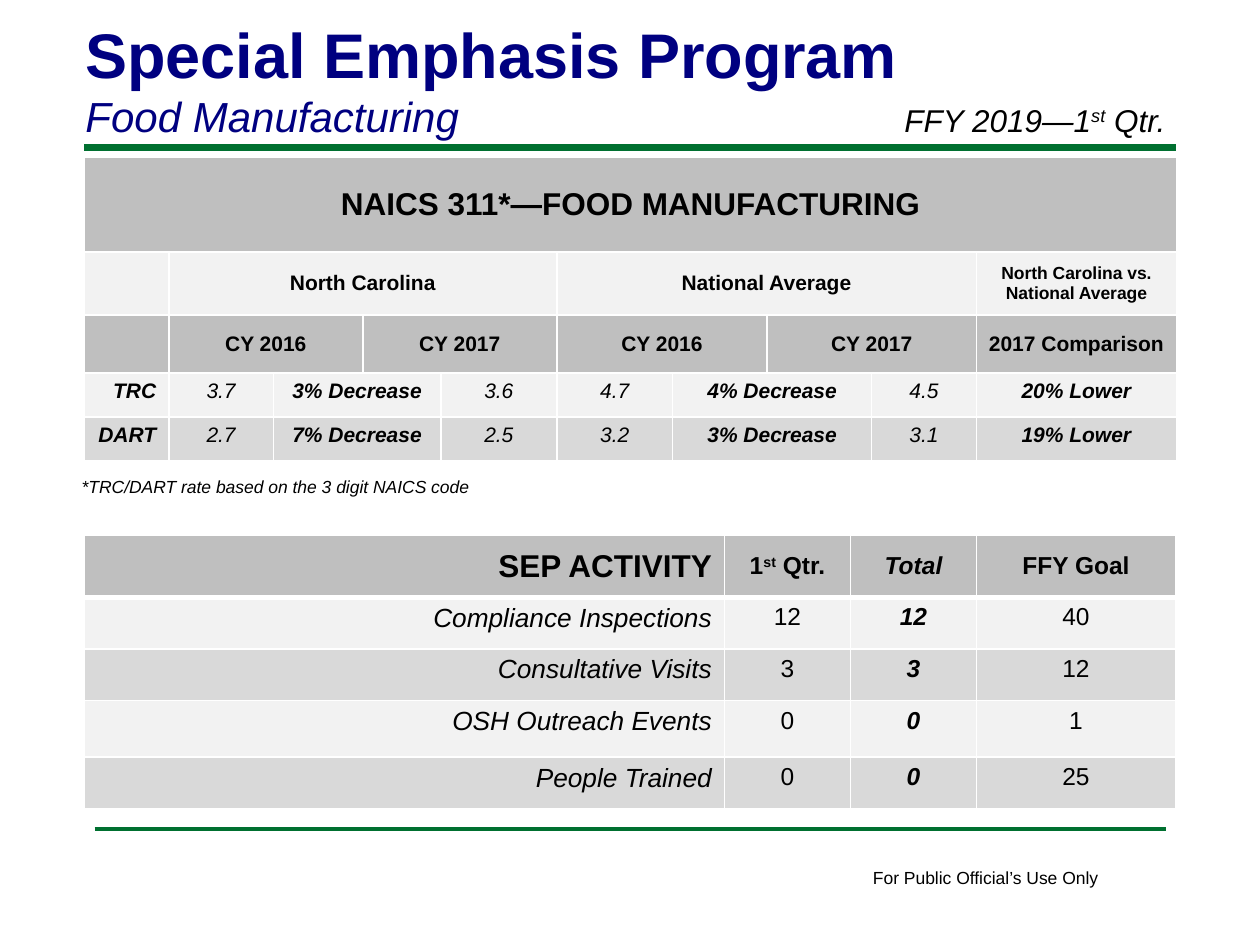
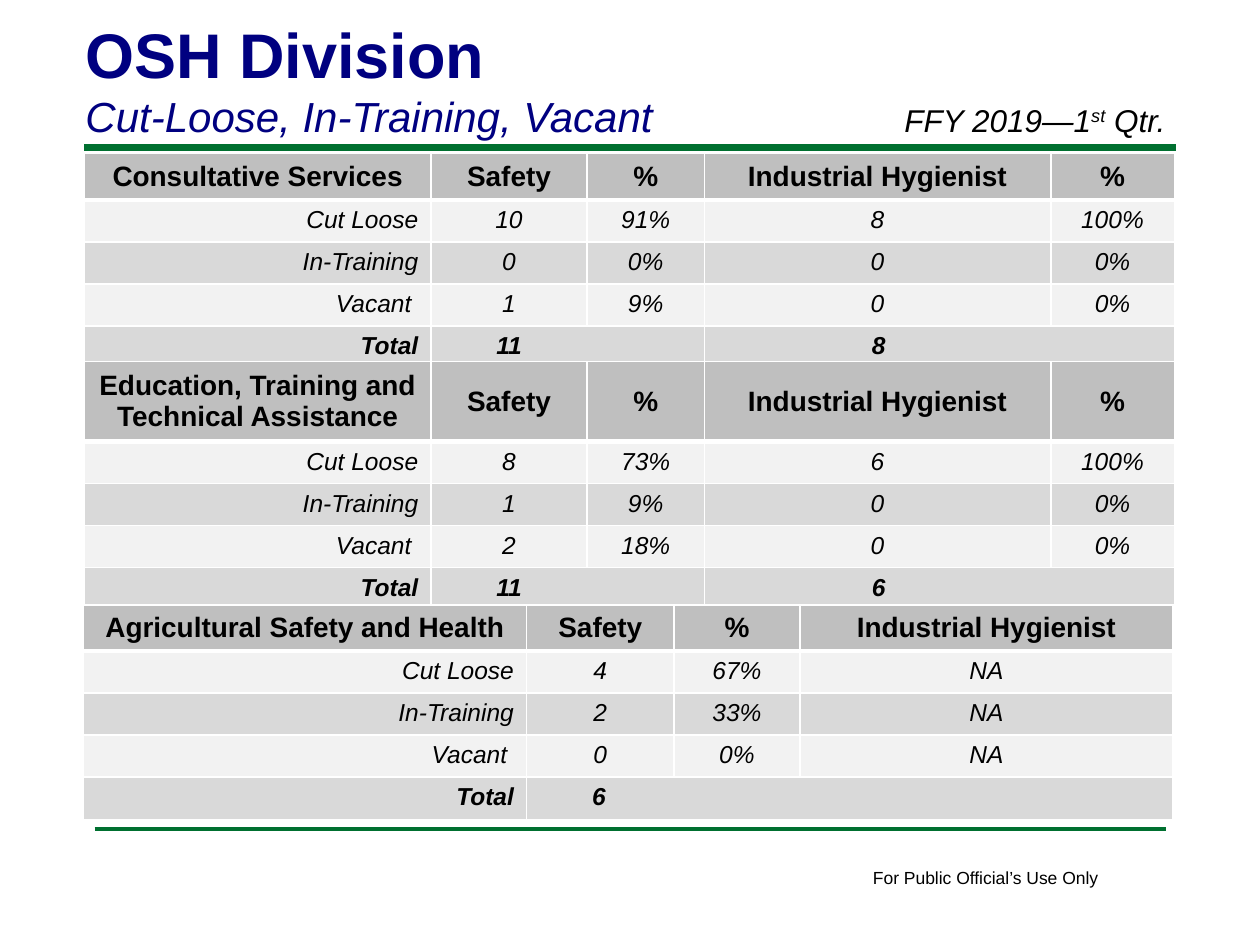
from lxml.etree import SubElement
from pptx import Presentation
from pptx.dml.color import RGBColor
from pptx.enum.shapes import MSO_CONNECTOR
from pptx.enum.text import MSO_ANCHOR, PP_ALIGN
from pptx.oxml.ns import qn
from pptx.util import Inches, Pt

FONT = "Arial"
BLACK = RGBColor(0x00, 0x00, 0x00)
WHITE = RGBColor(0xFF, 0xFF, 0xFF)
NAVY = RGBColor(0x00, 0x00, 0x80)
GREEN = RGBColor(0x00, 0x70, 0x30)
HEADER_GRAY = RGBColor(0xBF, 0xBF, 0xBF)
LIGHT_GRAY = RGBColor(0xF2, 0xF2, 0xF2)
MIDDLE_GRAY = RGBColor(0xD9, 0xD9, 0xD9)

FOOD_FILLS = [HEADER_GRAY, LIGHT_GRAY, HEADER_GRAY, LIGHT_GRAY, MIDDLE_GRAY]
BANDED_FILLS = [HEADER_GRAY] + [LIGHT_GRAY, MIDDLE_GRAY] * 2

# Text between two ^ marks is superscript; None joins a cell to the one on its left.
PERIOD = "FFY 2019—1^st^ Qtr."
FOOTER = "For Public Official’s Use Only"
FOOTNOTE = "*TRC/DART rate based on the 3 digit NAICS code"

FOOD_COLUMNS = [0.67, 0.83, 0.71, 0.62, 0.92, 0.92, 0.75, 0.83, 0.83, 1.59]
FOOD_HEIGHTS = [0.75, 0.5, 0.46, 0.35, 0.35]
FOOD_ROWS = [
    ["NAICS 311*—FOOD MANUFACTURING"] + [None] * 9,
    ["", "North Carolina", None, None, None, "National Average", None, None, None,
     "North Carolina vs. National Average"],
    ["", "CY 2016", None, "CY 2017", None, "CY 2016", None, "CY 2017", None,
     "2017 Comparison"],
    ["TRC", "3.7", "3% Decrease", None, "3.6", "4.7", "4% Decrease", None, "4.5",
     "20% Lower"],
    ["DART", "2.7", "7% Decrease", None, "2.5", "3.2", "3% Decrease", None, "3.1",
     "19% Lower"],
]

ACTIVITY_COLUMNS = [5.08, 1, 1, 1.58]
ACTIVITY_HEIGHTS = [0.49, 0.41, 0.41, 0.45, 0.41]
ACTIVITY_ROWS = [
    ["SEP ACTIVITY", "1^st^ Qtr.", "Total", "FFY Goal"],
    ["Compliance Inspections", "12", "12", "40"],
    ["Consultative Visits", "3", "3", "12"],
    ["OSH Outreach Events", "0", "0", "1"],
    ["People Trained", "0", "0", "25"],
]

STAFF_COLUMNS = [2.75, 1.24, 0.93, 2.75, 0.98]
STAFF_TABLES = [
    {"left": 0.67, "top": 1.22, "columns": STAFF_COLUMNS, "header_height": 0.35, "rows": [
        ["Consultative Services", "Safety", "%", "Industrial Hygienist", "%"],
        ["Cut Loose", "10", "91%", "8", "100%"],
        ["In-Training", "0", "0%", "0", "0%"],
        ["Vacant ", "1", "9%", "0", "0%"],
        ["Total", "11", None, "8", None]]},
    {"left": 0.67, "top": 2.87, "columns": STAFF_COLUMNS, "header_height": 0.6, "rows": [
        ["Education, Training and Technical Assistance", "Safety", "%",
         "Industrial Hygienist", "%"],
        ["Cut Loose", "8", "73%", "6", "100%"],
        ["In-Training", "1", "9%", "0", "0%"],
        ["Vacant ", "2", "18%", "0", "0%"],
        ["Total", "11", None, "6", None]]},
    {"left": 0.66, "top": 4.8, "columns": [3.52, 1.17, 1, 2.96], "header_height": 0.34, "rows": [
        ["Agricultural Safety and Health", "Safety", "%", "Industrial Hygienist"],
        ["Cut Loose", "4", "67%", "NA"],
        ["In-Training", "2", "33%", "NA"],
        ["Vacant ", "0", "0%", "NA"],
        ["Total", "6", None, None]]},
]
STAFF_ROW_HEIGHT = 0.32
TOTAL_INDENTS = {1: 0.52, 3: 1.33}


def write(para, text, size, bold=False, italic=False, color=BLACK):
    for index, part in enumerate(text.split("^")):
        span = para.add_run()
        span.text = part
        font = span.font
        font.name, font.size, font.bold, font.italic = FONT, Pt(size), bold, italic
        font.color.rgb = color
        if index % 2:
            span._r.get_or_add_rPr().set("baseline", "30000")


def add_text(page, left, top, width, height, lines, wrap=True, anchor=MSO_ANCHOR.TOP):
    """Each line is a text and a dict of the arguments of write."""
    box = page.shapes.add_textbox(Inches(left), Inches(top), Inches(width), Inches(height))
    frame = box.text_frame
    frame.word_wrap = wrap
    frame.vertical_anchor = anchor
    for index, (text, style) in enumerate(lines):
        para = frame.add_paragraph() if index else frame.paragraphs[0]
        write(para, text, **style)


def add_rule(page, left, right, y, weight):
    rule = page.shapes.add_connector(
        MSO_CONNECTOR.STRAIGHT, Inches(left), Inches(y), Inches(right), Inches(y))
    rule.line.color.rgb = GREEN
    rule.line.width = Pt(weight)
    SubElement(rule._element.spPr, qn("a:effectLst"))


def add_page(deck, title, subtitle):
    page = deck.slides.add_slide(deck.slide_layouts[6])
    add_rule(page, 0.67, 9.33, 1.17, 4)
    add_rule(page, 0.75, 9.25, 6.58, 2)
    add_text(page, 6.83, 6.83, 2.01, 0.27, [(FOOTER, {"size": 10})], wrap=False)
    add_text(page, 0.58, 0.06, 8.25, 1.11,
             [(title, {"size": 36, "bold": True, "color": NAVY}),
              (subtitle, {"size": 24, "italic": True, "color": NAVY})],
             anchor=MSO_ANCHOR.BOTTOM)
    add_text(page, 7.08, 0.75, 2.5, 0.4, [(PERIOD, {"size": 18, "italic": True})])
    return page


def set_borders(cell, top, bottom):
    properties = cell._tc.get_or_add_tcPr()
    for side, weight in (("L", 1), ("R", 1), ("T", top), ("B", bottom)):
        line = SubElement(properties, qn(f"a:ln{side}"), w=str(Pt(weight)))
        fill = SubElement(line, qn("a:solidFill"))
        SubElement(fill, qn("a:srgbClr"), val=str(WHITE))


def add_grid(page, left, top, columns, heights, rows, fills, style_of,
             header_rows=1, header_border=3):
    """style_of(row, column) gives the arguments of write for that cell."""
    table = page.shapes.add_table(
        len(rows), len(columns), Inches(left), Inches(top),
        Inches(sum(columns)), Inches(sum(heights))).table
    for column, width in zip(table.columns, columns):
        column.width = Inches(width)
    for r, texts in enumerate(rows):
        table.rows[r].height = Inches(heights[r])
        for c, text in enumerate(texts):
            cell = table.cell(r, c)
            set_borders(cell, header_border if r == 1 else 1, header_border if r == 0 else 1)
            cell.fill.solid()
            cell.fill.fore_color.rgb = fills[r]
            if not text:
                continue
            end = c
            while end + 1 < len(texts) and texts[end + 1] is None:
                end += 1
            if end > c:
                cell.merge(table.cell(r, end))
            if r < header_rows:
                cell.vertical_anchor = MSO_ANCHOR.MIDDLE
            para = cell.text_frame.paragraphs[0]
            label = c == 0 and r >= header_rows
            para.alignment = PP_ALIGN.RIGHT if label else PP_ALIGN.CENTER
            write(para, text, **style_of(r, c))
    return table


def food_style(row, column):
    size = 18 if row == 0 else 10 if (row, column) == (1, 9) else 12
    return {"size": size, "bold": row < 3 or column in (0, 2, 6, 9), "italic": row >= 3}


def activity_style(row, column):
    if row == 0:
        return {"size": 14 if column else 18, "bold": True, "italic": column == 2}
    return {"size": 14 if column else 15, "bold": column == 2, "italic": column in (0, 2)}


def staff_style(row, column):
    return {"size": 14 if row else 16, "bold": row in (0, 4), "italic": row > 0}


def add_food_page(deck):
    page = add_page(deck, "Special Emphasis Program", "Food Manufacturing")
    add_grid(page, 0.67, 1.25, FOOD_COLUMNS, FOOD_HEIGHTS, FOOD_ROWS, FOOD_FILLS,
             food_style, header_rows=3, header_border=1)
    add_text(page, 0.55, 3.73, 3.38, 0.27,
             [(FOOTNOTE, {"size": 10, "italic": True})], wrap=False)
    activity = add_grid(page, 0.67, 4.25, ACTIVITY_COLUMNS, ACTIVITY_HEIGHTS,
                        ACTIVITY_ROWS, BANDED_FILLS, activity_style)
    activity.cell(0, 0).text_frame.paragraphs[0].alignment = PP_ALIGN.RIGHT


def add_staff_page(deck):
    page = add_page(deck, "OSH Division", "Cut-Loose, In-Training, Vacant")
    for staff in STAFF_TABLES:
        rows = staff["rows"]
        heights = [staff["header_height"]] + [STAFF_ROW_HEIGHT] * (len(rows) - 1)
        table = add_grid(page, staff["left"], staff["top"], staff["columns"], heights,
                         rows, BANDED_FILLS, staff_style)
        for column, indent in TOTAL_INDENTS.items():
            if rows[-1][column]:
                cell = table.cell(len(rows) - 1, column)
                cell.margin_left = Inches(indent)
                cell.text_frame.paragraphs[0].alignment = PP_ALIGN.LEFT


def main():
    deck = Presentation()
    deck.slide_width, deck.slide_height = Inches(10), Inches(7.5)
    add_food_page(deck)
    add_staff_page(deck)
    deck.save("out.pptx")


if __name__ == "__main__":
    main()
